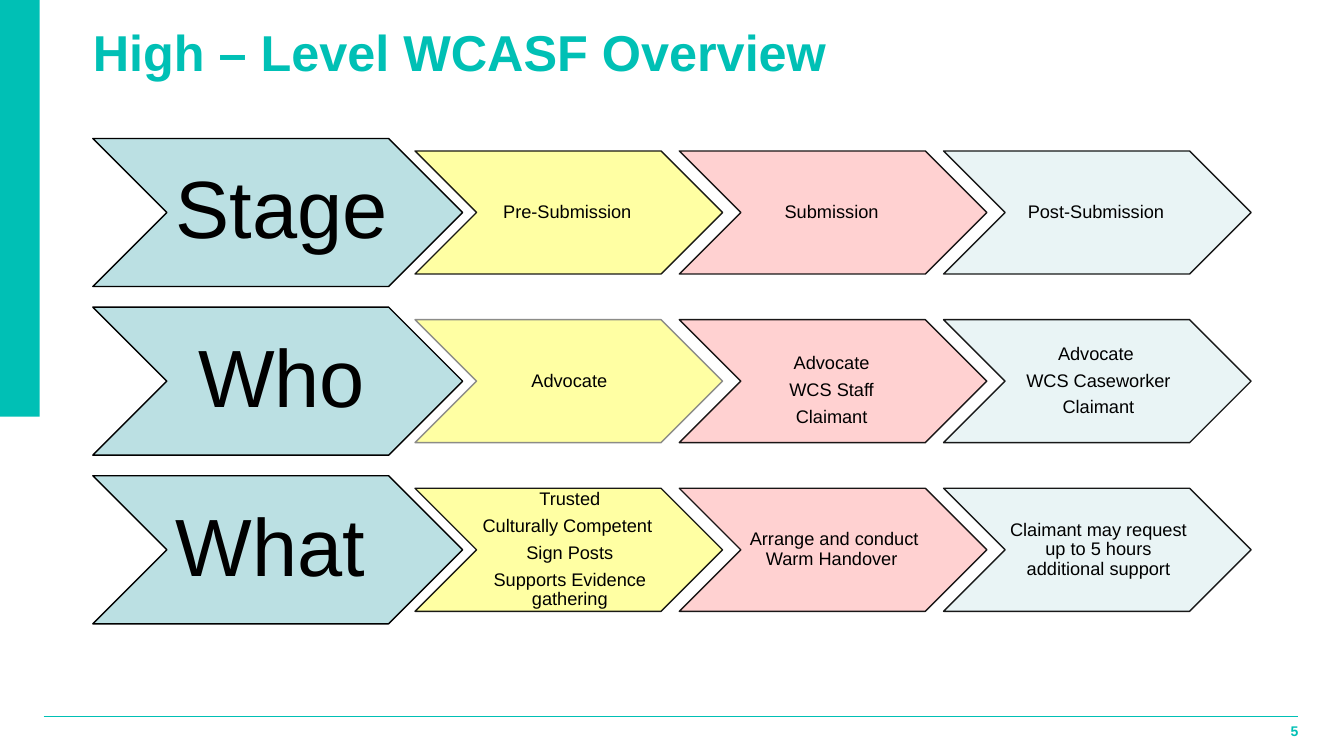
from lxml.etree import SubElement
from pptx import Presentation
from pptx.dml.color import RGBColor
from pptx.enum.shapes import MSO_CONNECTOR as Connector, MSO_SHAPE as Shape
from pptx.enum.text import MSO_ANCHOR as Anchor, MSO_AUTO_SIZE as AutoSize, PP_ALIGN as Align
from pptx.oxml.ns import qn
from pptx.util import Cm, Pt

TEAL, BLACK, GREY = "00C0B5", "000000", "808080"
LABEL_FILL = "BBE0E3"
STEP_FILLS = ["FFFF99", "FFCCCC", "E7F3F4"]
ROWS = [
    ("Stage", ["Pre-Submission ", "Submission ", "Post-Submission "]),
    ("Who", [
        " Advocate ",
        "Advocate \nWCS Staff \nClaimant ",
        "Advocate \nWCS Caseworker\nClaimant",
    ]),
    ("What ", [
        "Trusted\nCulturally Competent \nSign Posts\nSupports Evidence gathering",
        "Arrange and conduct Warm Handover ",
        "Claimant may request up to 5 hours additional support",
    ]),
]
LABEL_WIDTH, LABEL_HEIGHT = 9.32, 3.73
STEP_WIDTH, STEP_HEIGHT = 7.75, 3.1
STEP_OFFSET, STEP_PITCH, ROW_PITCH = 8.12, 6.66, 4.25


def paint(color_format, color, opacity=100):
    color_format.rgb = RGBColor.from_string(color)
    if opacity < 100:
        for element in color_format._xFill.iter(qn("a:srgbClr")):
            SubElement(element, qn("a:alpha")).set("val", str(opacity * 1000))


def set_margins(text_frame, left=0, top=0, right=0, bottom=0):
    text_frame.margin_left, text_frame.margin_top = Cm(left), Cm(top)
    text_frame.margin_right, text_frame.margin_bottom = Cm(right), Cm(bottom)


def format_text(text_frame, size, color, align, bold=False):
    text_frame.word_wrap = True
    for paragraph in text_frame.paragraphs:
        paragraph.alignment = align
        for run in paragraph.runs:
            run.font.name, run.font.size, run.font.bold = "Arial", Pt(size), bold
            paint(run.font.color, color)


def add_chevron(slide, left, top, width, height, text, size, fill, line=BLACK, opacity=100):
    shape = slide.shapes.add_shape(Shape.CHEVRON, Cm(left), Cm(top), Cm(width), Cm(height))
    shape.shadow.inherit = False
    shape.fill.solid()
    paint(shape.fill.fore_color, fill)
    shape.line.width = Pt(1)
    paint(shape.line.color, line)
    if opacity < 100:
        for element in shape._element.spPr.iter(qn("a:srgbClr")):
            SubElement(element, qn("a:alpha")).set("val", str(opacity * 1000))
    text_frame = shape.text_frame
    text_frame.text = text
    text_frame.vertical_anchor = Anchor.MIDDLE
    format_text(text_frame, size, BLACK, Align.CENTER)
    for paragraph in text_frame.paragraphs:
        paragraph.line_spacing = 0.9
        paragraph.space_after = Pt(round(size * 0.4, 1))
    return shape


def add_row(slide, left, top, label, steps):
    shape = add_chevron(slide, left, top, LABEL_WIDTH, LABEL_HEIGHT, label, 58, LABEL_FILL)
    set_margins(shape.text_frame, 0.2, 0.1, 0, 0.1)
    step_top = top + (LABEL_HEIGHT - STEP_HEIGHT) / 2
    for column, (text, fill) in enumerate(zip(steps, STEP_FILLS)):
        step_left = left + STEP_OFFSET + column * STEP_PITCH
        line = GREY if text == " Advocate " else BLACK
        shape = add_chevron(slide, step_left, step_top, STEP_WIDTH, STEP_HEIGHT,
                            text, 13, fill, line, 90)
        lowered = text.startswith("Advocate \nWCS Staff")
        set_margins(shape.text_frame, 0.05, 0.5 if lowered else 0.03, 0, 0.03)


def add_process(slide, left, top):
    for index, (label, steps) in enumerate(ROWS):
        add_row(slide, left, top + index * ROW_PITCH, label, steps)


def add_side_bar(slide, left, top, width, height):
    bar = slide.shapes.add_shape(Shape.RECTANGLE, Cm(left), Cm(top), Cm(width), Cm(height))
    bar.shadow.inherit = False
    bar.fill.solid()
    paint(bar.fill.fore_color, TEAL)
    bar.line.fill.background()


def add_title(slide, left, top, width, height):
    title = slide.shapes.title
    title.left, title.top, title.width, title.height = Cm(left), Cm(top), Cm(width), Cm(height)
    text_frame = title.text_frame
    text_frame.text = "High – Level WCASF Overview"
    text_frame.auto_size = AutoSize.NONE
    text_frame.vertical_anchor = Anchor.TOP
    set_margins(text_frame, top=0.1)
    format_text(text_frame, 36, TEAL, Align.LEFT, True)


def add_footer(slide, left, top, width):
    right = left + width
    rule = slide.shapes.add_connector(Connector.STRAIGHT, Cm(left), Cm(top), Cm(right), Cm(top))
    rule.line.width = Pt(0.75)
    paint(rule.line.color, TEAL)
    SubElement(rule._element.spPr, qn("a:effectLst"))
    number = slide.shapes.add_textbox(Cm(right - 1.88), Cm(top + 0.15), Cm(1.88), Cm(0.41))
    number.text_frame.text = "5"
    set_margins(number.text_frame)
    format_text(number.text_frame, 10, TEAL, Align.RIGHT, True)


def main():
    presentation = Presentation()
    presentation.slide_width, presentation.slide_height = Cm(33.87), Cm(19.05)
    slide = presentation.slides.add_slide(presentation.slide_layouts[5])
    add_side_bar(slide, 0, 0, 1, 10.5)
    add_footer(slide, 1.1, 18.06, 31.62)
    add_title(slide, 2.34, 0.43, 29.2, 4.27)
    add_process(slide, 2.34, 3.49)
    presentation.save("out.pptx")


if __name__ == "__main__":
    main()
